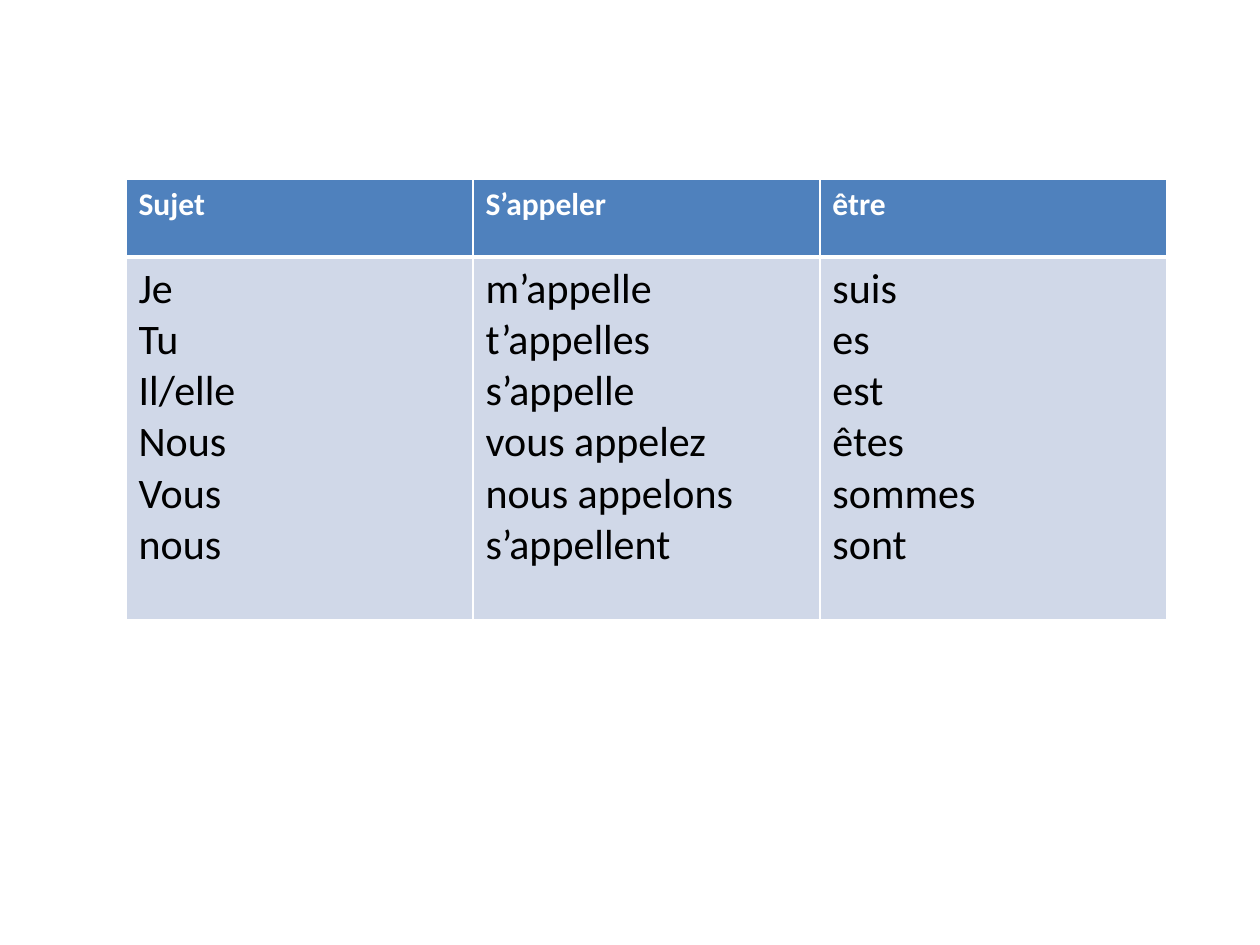
from lxml.etree import SubElement
from pptx import Presentation
from pptx.dml.color import RGBColor
from pptx.oxml.ns import qn
from pptx.util import Emu, Pt

SCALE = 914400 // 126
WHITE = RGBColor(0xFF, 0xFF, 0xFF)
BLACK = RGBColor(0, 0, 0)
BLUE = RGBColor(0x4F, 0x81, 0xBD)
PALE = RGBColor(0xD0, 0xD8, 0xE8)

HEADS = ["Sujet", "S’appeler", "être"]
FORMS = [
    ["Je", "Tu", "Il/elle", "Nous", "Vous", "nous"],
    ["m’appelle", "t’appelles", "s’appelle",
     "vous appelez", "nous appelons", "s’appellent"],
    ["suis", "es", "est", "êtes", "sommes", "sont"],
]


def px(count):
    return Emu(count * SCALE)


def write(frame, lines, size, color, bold=False):
    """Write each line as a paragraph of its own."""
    frame.text = "\n".join(lines)
    for para in frame.paragraphs:
        for run in para.runs:
            font = run.font
            font.name = "Calibri"
            font.size = Pt(size)
            font.bold = bold
            font.color.rgb = color


def edge(cell, top=1, bottom=1):
    """Draw white cell borders, with widths in points."""
    props = cell._tc.get_or_add_tcPr()
    for side, width in zip("LRTB", (1, 1, top, bottom)):
        line = SubElement(props, qn(f"a:ln{side}"), w=str(Pt(width)))
        fill = SubElement(line, qn("a:solidFill"))
        SubElement(fill, qn("a:srgbClr"), val=str(WHITE))


def paint(cell, color):
    cell.fill.solid()
    cell.fill.fore_color.rgb = color


def add_verbs(slide):
    frame = slide.shapes.add_table(
        2, len(HEADS), px(126), px(179), px(347 * len(HEADS)), px(441))
    table = frame.table
    for row, height in zip(table.rows, (78, 363)):
        row.height = px(height)
    for col, (head, forms) in enumerate(zip(HEADS, FORMS)):
        table.columns[col].width = px(347)
        title, body = table.cell(0, col), table.cell(1, col)
        edge(title, bottom=3)
        edge(body, top=3)
        paint(title, BLUE)
        paint(body, PALE)
        write(title.text_frame, [head], size=18, color=WHITE, bold=True)
        write(body.text_frame, forms, size=24, color=BLACK)


def main():
    deck = Presentation()
    deck.slide_width = px(1260)
    deck.slide_height = px(945)
    slide = deck.slides.add_slide(deck.slide_layouts[6])
    add_verbs(slide)
    deck.save("out.pptx")


if __name__ == "__main__":
    main()
